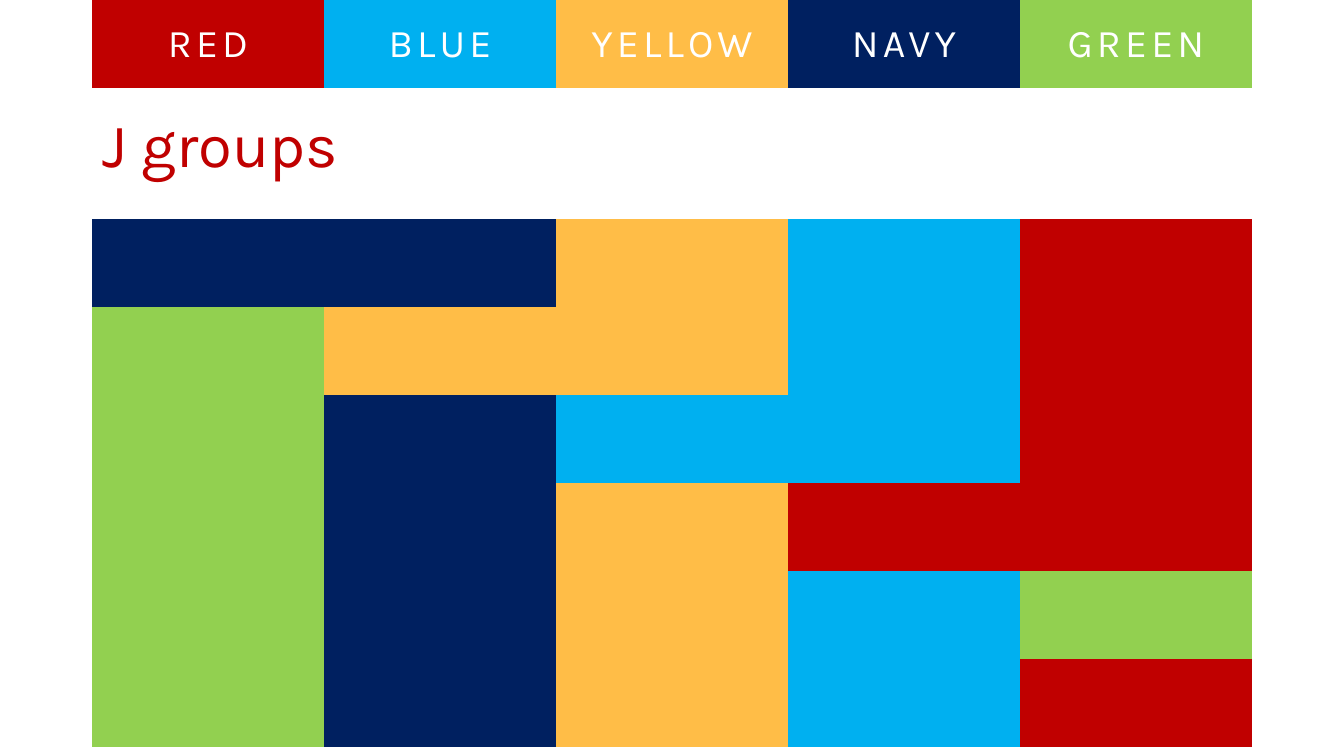
from dataclasses import dataclass

from pptx import Presentation
from pptx import util as u
from pptx.dml.color import RGBColor
from pptx.enum import text
from pptx.oxml.ns import qn

SCALE = 914400 / 100.8
FONT = "Karla"
LEFT, WIDE, HIGH = 92, 232, 88
PLAIN = "{2D5ABB26-0587-4C30-8999-92F81FD0307C}"
HUES = {"R": "C00000", "B": "00B0F0", "Y": "FFBD47", "N": "002060", "G": "92D050"}


@dataclass
class Grid:
    top: int
    rows: list[str]
    names: tuple[str, ...] = ()


GRIDS = [
    Grid(219, ["NNYBR", "GYYBR", "GNBBR", "GNYRR", "GNYBG", "GNYBR"]),
    Grid(0, ["RBYNG"], ("RED", "BLUE", "YELLOW", "NAVY", "GREEN")),
]


def px(size: int) -> u.Emu:
    return u.Emu(round(size * SCALE))


def paint(part, hue: str) -> None:
    part.rgb = RGBColor.from_string(hue)


def write(para, words: str, size: int, hue: str, gap: int = 0) -> None:
    run = para.add_run()
    run.text = words
    run.font.name = FONT
    run.font.size = u.Pt(size)
    paint(run.font.color, hue)
    if gap:
        run.font._element.set("spc", str(gap * 100))


def draw(slide, grid: Grid) -> None:
    rows, cols = len(grid.rows), len(grid.rows[0])
    table = slide.shapes.add_table(
        rows, cols, px(LEFT), px(grid.top), px(WIDE * cols), px(HIGH * rows)
    ).table
    table.first_row = table.horz_banding = False
    table._tbl.tblPr.find(qn("a:tableStyleId")).text = PLAIN
    for col in table.columns:
        col.width = px(WIDE)
    for row, keys in zip(table.rows, grid.rows):
        row.height = px(HIGH)
        for cell, key in zip(row.cells, keys):
            cell.fill.solid()
            paint(cell.fill.fore_color, HUES[key])
    for cell, name in zip(table.rows[0].cells, grid.names):
        cell.vertical_anchor = text.MSO_ANCHOR.MIDDLE
        para = cell.text_frame.paragraphs[0]
        para.alignment = text.PP_ALIGN.CENTER
        write(para, name, 28, "FFFFFF", 3)


def head(slide, words: str) -> None:
    title = slide.shapes.title
    title.left, title.top = px(LEFT), px(40)
    title.width, title.height = px(1252), px(146)
    frame = title.text_frame
    frame.auto_size = text.MSO_AUTO_SIZE.NONE
    frame.vertical_anchor = text.MSO_ANCHOR.BOTTOM
    para = frame.paragraphs[0]
    para.alignment = text.PP_ALIGN.LEFT
    para.line_spacing = 0.9
    write(para, words, 44, HUES["R"])


def main() -> None:
    deck = Presentation()
    deck.slide_width, deck.slide_height = px(1344), px(756)
    slide = deck.slides.add_slide(deck.slide_layouts[5])
    head(slide, "J groups")
    for grid in GRIDS:
        draw(slide, grid)
    deck.save("out.pptx")


if __name__ == "__main__":
    main()
